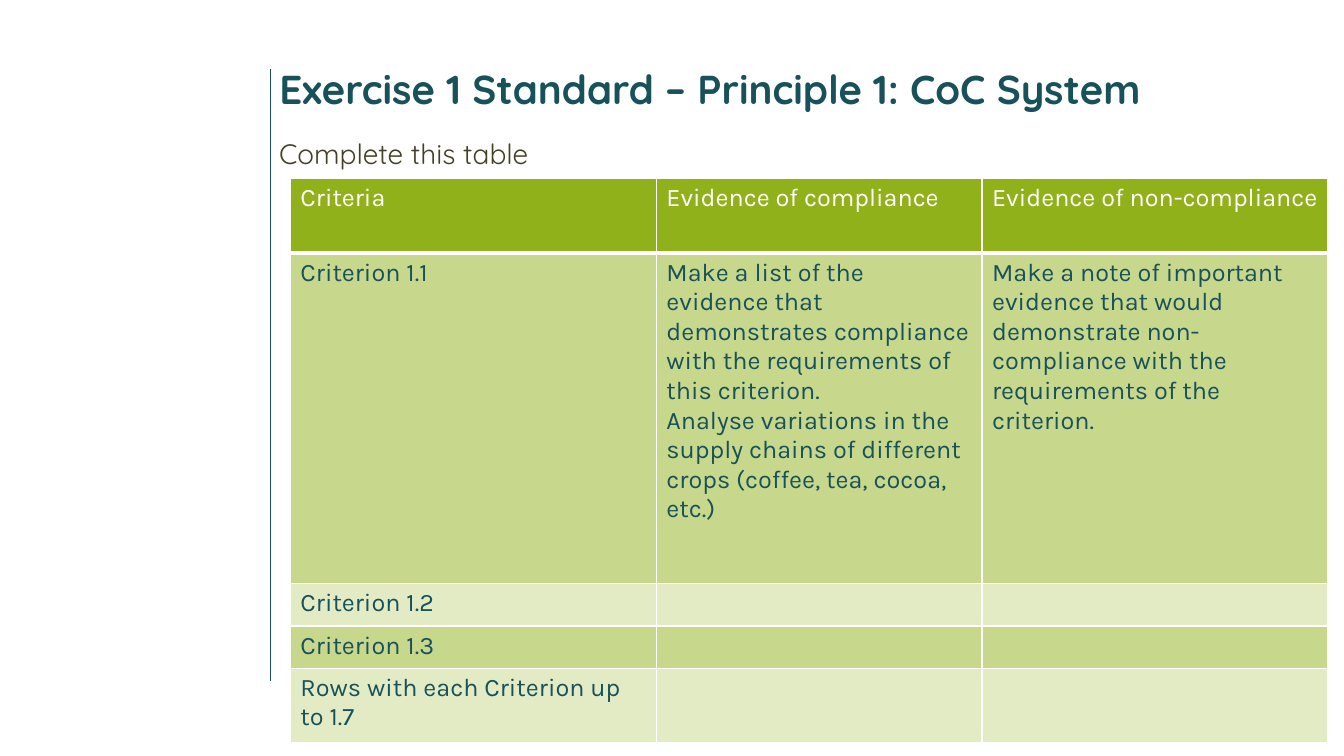
from lxml import etree
from pptx import Presentation
from pptx.dml.color import RGBColor as RGB
from pptx.enum.shapes import MSO_CONNECTOR as Link
from pptx.enum.text import MSO_ANCHOR as Anchor, MSO_AUTO_SIZE as Fit, PP_ALIGN as Align
from pptx.oxml import parse_xml
from pptx.oxml.ns import nsdecls, qn
from pptx.util import Inches, Pt

TEAL = RGB(0x17, 0x51, 0x59)
GREEN = RGB(0x91, 0xB1, 0x1B)
BROWN = RGB(0x43, 0x40, 0x25)
WHITE = RGB(0xFF, 0xFF, 0xFF)

TITLE = "Exercise 1 Standard – Principle 1: CoC System"
TASK = "Complete this table"
ROWS = [
    ("Criteria", "Evidence of compliance", "Evidence of non-compliance"),
    (
        "Criterion 1.1",
        "Make a list of the evidence that demonstrates compliance with the "
        "requirements of this criterion.\n"
        "Analyse variations in the supply chains of different crops "
        "(coffee, tea, cocoa, etc.)",
        "Make a note of important evidence that would demonstrate "
        "non-compliance with the requirements of the criterion.",
    ),
    ("Criterion 1.2", "", ""),
    ("Criterion 1.3", "", ""),
    ("Rows with each Criterion up to 1.7", "", ""),
]
WIDTHS = [3.63, 3.23, 3.43]
HEIGHTS = [0.74, 3.28, 0.42, 0.42, 0.74]


def style(frame, font, size, color, bold=False):
    for para in frame.paragraphs:
        para.alignment = Align.LEFT
        for run in para.runs:
            run.font.name = font
            run.font.size = Pt(size)
            run.font.bold = bold
            run.font.color.rgb = color


def set_box(frame):
    frame.word_wrap = True
    frame.auto_size = Fit.NONE
    frame.vertical_anchor = Anchor.TOP


def add_edges(cell, base):
    props = cell._tc.get_or_add_tcPr()
    for spot, side in enumerate("LRTB"):
        width = Pt(base if side == "B" else 1)
        props.insert(spot, parse_xml(
            f'<a:ln{side} {nsdecls("a")} w="{width}"><a:solidFill>'
            f'<a:srgbClr val="{WHITE}"/></a:solidFill></a:ln{side}>'))


def tint(cell, share):
    cell.fill.solid()
    cell.fill.fore_color.rgb = GREEN
    if share < 100:
        color = cell._tc.tcPr.find(qn("a:solidFill")).find(qn("a:srgbClr"))
        etree.SubElement(color, qn("a:alpha")).set("val", str(share * 1000))


def add_title(slide):
    title = slide.shapes.title
    title.left, title.top = Inches(2.67), Inches(0.59)
    title.width, title.height = Inches(10.07), Inches(0.41)
    title.text_frame.text = TITLE
    set_box(title.text_frame)
    style(title.text_frame, "Quicksand", 28.8, TEAL, True)


def add_rule(slide):
    rule = slide.shapes.add_connector(
        Link.STRAIGHT, Inches(2.68), Inches(0.68), Inches(2.68), Inches(6.76))
    rule.line.color.rgb = TEAL
    rule.line.width = Pt(0.5)
    etree.SubElement(rule._element.spPr, qn("a:effectLst"))


def add_task(slide):
    box = slide.shapes.add_textbox(
        Inches(2.67), Inches(1.3), Inches(11.5 - 0.84), Inches(0.45))
    box.text_frame.text = TASK
    set_box(box.text_frame)
    style(box.text_frame, "Quicksand", 20, BROWN)
    box.text_frame.paragraphs[0].space_after = Pt(12)


def add_grid(slide):
    grid = slide.shapes.add_table(
        len(ROWS), len(WIDTHS), Inches(2.88), Inches(1.77),
        Inches(sum(WIDTHS)), Inches(sum(HEIGHTS))).table
    for col, width in zip(grid.columns, WIDTHS):
        col.width = Inches(width)
    for row, height in zip(grid.rows, HEIGHTS):
        row.height = Inches(height)
    for r, texts in enumerate(ROWS):
        head = r == 0
        share = 100 if head else 50 if r % 2 else 25
        for c, text in enumerate(texts):
            cell = grid.cell(r, c)
            cell.text_frame.text = text
            style(cell.text_frame, "Karla", 18, WHITE if head else TEAL)
            tint(cell, share)
            add_edges(cell, 3 if head else 1)


def main():
    deck = Presentation()
    deck.slide_width, deck.slide_height = Inches(13.33), Inches(7.5)
    slide = deck.slides.add_slide(deck.slide_layouts[5])
    add_rule(slide)
    add_title(slide)
    add_task(slide)
    add_grid(slide)
    deck.save("out.pptx")


if __name__ == "__main__":
    main()
